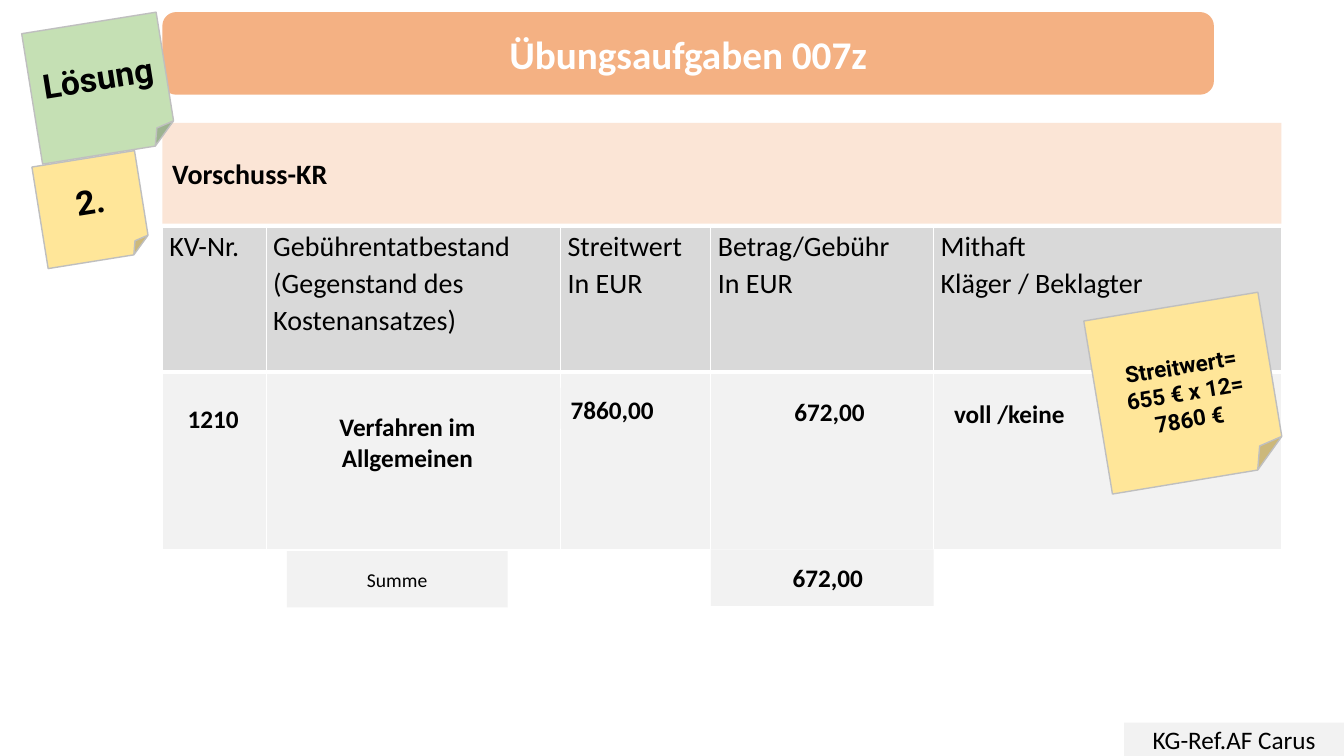
from itertools import accumulate

from lxml import etree
from pptx import Presentation
from pptx.dml.color import RGBColor
from pptx.enum.shapes import MSO_SHAPE
from pptx.enum.text import MSO_ANCHOR, PP_ALIGN
from pptx.oxml.ns import qn
from pptx.util import Emu, Inches, Pt

RECT, ROUND, NOTE = MSO_SHAPE.RECTANGLE, MSO_SHAPE.ROUNDED_RECTANGLE, MSO_SHAPE.FOLDED_CORNER
LEFT, CENTER = PP_ALIGN.LEFT, PP_ALIGN.CENTER
MIDDLE = MSO_ANCHOR.MIDDLE

COLORS = {
    "white": "FFFFFF", "black": "000000", "orange": "F4B183", "peach": "FBE5D6",
    "green": "C5E0B4", "yellow": "FFE699", "edge": "BFBFBF",
    "header": "D9D9D9", "body": "F2F2F2",
}
WIDTH, HEIGHT = 13.33, 7.5
COLUMNS = [1.03, 2.92, 1.49, 2.21, 3.45]
ROWS = [1.43, 1.76]
HEADINGS = [
    ["KV-Nr."],
    ["Gebührentatbestand", "(Gegenstand des Kostenansatzes)"],
    ["Streitwert", "In EUR"],
    ["Betrag/Gebühr", "In EUR"],
    ["Mithaft", "Kläger / Beklagter"],
]
ENTRIES = [
    ("1210", (0.06, 0.16, 0.86, 0.2), {"align": CENTER}),
    ("Verfahren im Allgemeinen", (0.06, 0.11, 0.84, 0.74), {"align": CENTER, "bottom": 0.35}),
    ("7860,00", (0, 0.09, 0.85, 0.23), {"spacing": 1.07}),
    ("672,00", (0.33, 0.05, 0.45, 0.33), {"spacing": 1.07}),
    ("voll /keine", (0.03, 0.08, 0.95, 0.3), {"spacing": 1.07}),
]


def rgb(name):
    return RGBColor.from_string(COLORS[name])


def percent(x, y, w, h):
    return x * WIDTH / 100, y * HEIGHT / 100, w * WIDTH / 100, h * HEIGHT / 100


def within(box, share):
    left, top, width, height = box
    x, y, w, h = share
    return left + x * width, top + y * height, w * width, h * height


def write(tf, lines, size=18, font="Calibri", color="black", bold=False, align=LEFT,
          spacing=None, left=0.1, top=0.05, right=0.1, bottom=0.05):
    tf.word_wrap = True
    tf.margin_left, tf.margin_top = Inches(left), Inches(top)
    tf.margin_right, tf.margin_bottom = Inches(right), Inches(bottom)
    for i, line in enumerate(lines):
        p = tf.add_paragraph() if i else tf.paragraphs[0]
        p.alignment = align
        if spacing:
            p.line_spacing = spacing
        r = p.add_run()
        r.text = line
        r.font.size, r.font.name, r.font.bold = Pt(size), font, bold
        r.font.color.rgb = rgb(color)


def panel(s, box, lines, fill, kind=RECT, line=None, rotation=0, **text):
    sp = s.shapes.add_shape(kind, *map(Inches, box))
    sp.shadow.inherit = False
    sp.rotation = rotation
    sp.fill.solid()
    sp.fill.fore_color.rgb = rgb(fill)
    if line:
        sp.line.color.rgb = rgb(line)
        sp.line.width = Pt(1)
    else:
        sp.line.fill.background()
    sp.text_frame.vertical_anchor = MIDDLE
    write(sp.text_frame, lines, **text)


def sticky_note(s, box, lines, fill, rotation, **text):
    panel(s, box, lines, fill, kind=NOTE, line="edge", rotation=rotation,
          font="Roboto", bold=True, align=CENTER, **text)


def style_cell(cell, fill, bottom):
    cell.fill.solid()
    cell.fill.fore_color.rgb = rgb(fill)
    tc_pr = cell._tc.get_or_add_tcPr()
    for i, (side, width) in enumerate(zip("LRTB", (1, 1, 1, bottom))):
        ln = etree.Element(qn(f"a:ln{side}"), w=str(Pt(width)))
        solid = etree.SubElement(ln, qn("a:solidFill"))
        etree.SubElement(solid, qn("a:srgbClr"), val=COLORS["white"])
        tc_pr.insert(i, ln)


def cost_table(s, box):
    left, top, width, height = box
    table = s.shapes.add_table(len(ROWS), len(COLUMNS), *map(Inches, box)).table
    table.first_row = table.horz_banding = False
    widths = [width * c / sum(COLUMNS) for c in COLUMNS]
    heights = [height * r / sum(ROWS) for r in ROWS]
    for row, h in zip(table.rows, heights):
        row.height = Inches(h)
    lefts = accumulate(widths[:-1], initial=left)
    for i, (x, w, heading, entry) in enumerate(zip(lefts, widths, HEADINGS, ENTRIES)):
        table.columns[i].width = Inches(w)
        style_cell(table.cell(0, i), "header", 3)
        style_cell(table.cell(1, i), "body", 1)
        cell = table.cell(0, i)
        cell.margin_left = cell.margin_right = Inches(0.07)
        cell.margin_top = cell.margin_bottom = Emu(0)
        write(cell.text_frame, heading, size=20, spacing=1.07,
              left=0.07, top=0, right=0.07, bottom=0)
        label, share, text = entry
        body = (x, top + heights[0], w, heights[1])
        panel(s, within(body, share), [label], "body", bold=True, **text)


def sum_row(s, box):
    total = sum(COLUMNS)
    name_start, amount_start = COLUMNS[0] / total, sum(COLUMNS[:3]) / total
    name_width, amount_width = COLUMNS[1] / total, COLUMNS[3] / total
    panel(s, within(box, (name_start + 0.07 * name_width, 0.03, 0.75 * name_width, 1)),
          ["Summe"], "body", size=14, align=CENTER)
    panel(s, within(box, (amount_start, 0, amount_width, 1)),
          ["672,00"], "body", bold=True, align=CENTER, left=0.21)


def header(s, title_box, band_box):
    panel(s, title_box, ["Übungsaufgaben 007z"], "orange", kind=ROUND,
          size=28, color="white", bold=True, align=CENTER)
    panel(s, band_box, ["Vorschuss-KR"], "peach", size=20, bold=True)


def solution_slide(prs):
    s = prs.slides.add_slide(prs.slide_layouts[6])
    cost_table(s, percent(12.08, 30.13, 83.27, 42.53))
    header(s, percent(12.08, 1.6, 78.24, 10.93), percent(12.08, 16.27, 83.27, 13.33))
    sticky_note(s, percent(2.33, 2.93, 10.13, 17.47), ["Lösung"], "green", 350.9, size=24)
    panel(s, percent(83.65, 95.6, 16.35, 4.4), ["KG-Ref.AF Carus"], "body", align=CENTER)
    sticky_note(s, percent(81.62, 40.4, 13.13, 23.2),
                ["Streitwert=", "655 € x 12=", "7860 €"], "yellow", 350.6, size=16, top=0.32)
    sticky_note(s, percent(2.93, 20.93, 7.73, 13.6), ["2."], "yellow", 350.9, size=24)
    sum_row(s, percent(12.08, 72.67, 83.27, 7.47))


def main():
    prs = Presentation()
    prs.slide_width, prs.slide_height = Inches(WIDTH), Inches(HEIGHT)
    solution_slide(prs)
    prs.save("out.pptx")


if __name__ == "__main__":
    main()
